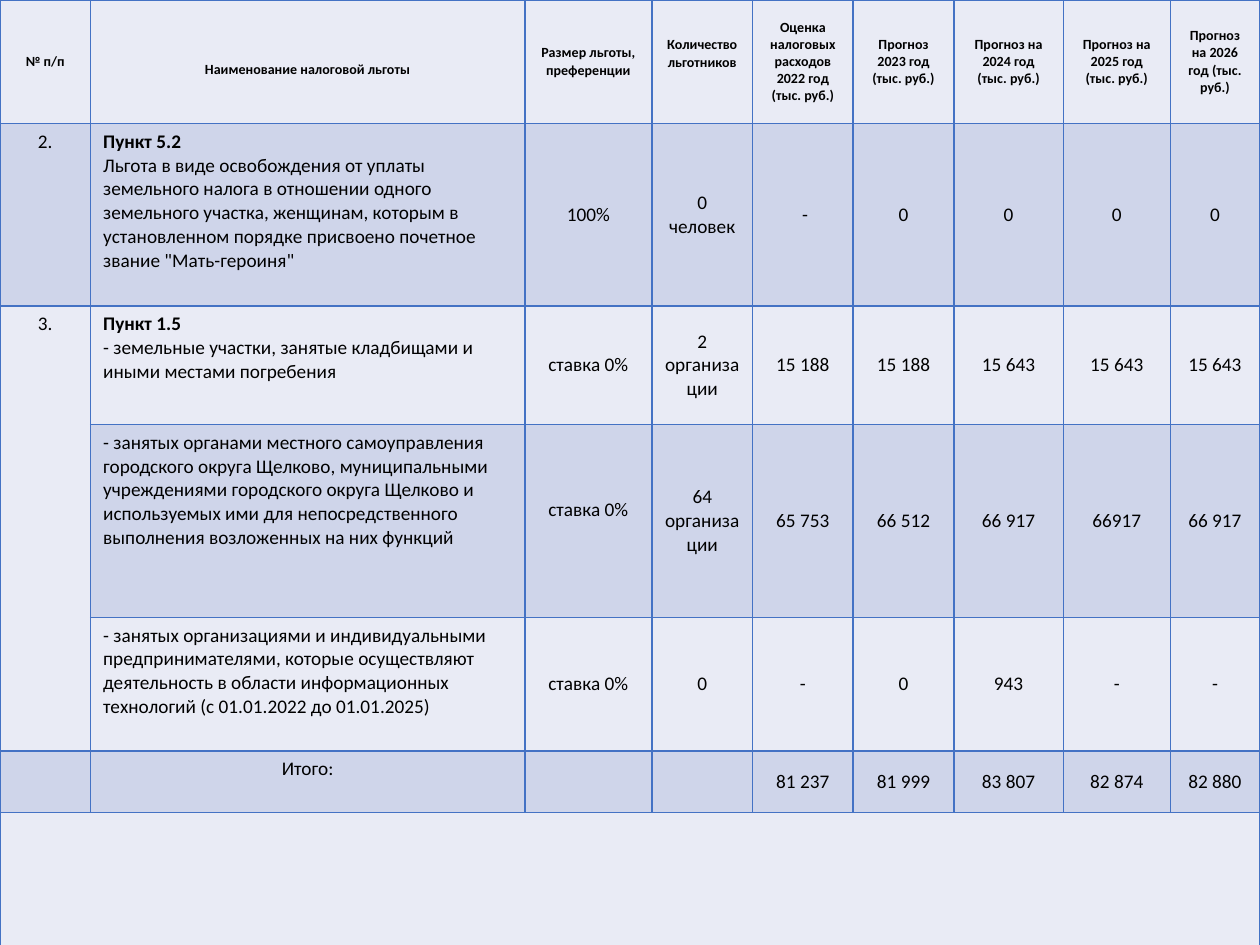
import lxml.etree
import pptx
import pptx.dml.color
import pptx.enum.text
import pptx.oxml.ns
import pptx.util

RGBColor = pptx.dml.color.RGBColor
PALE = RGBColor(0xE9, 0xEB, 0xF5)
TINTED = RGBColor(0xCF, 0xD5, 0xEA)
BORDER = RGBColor(0x44, 0x72, 0xC4)
BLACK = RGBColor(0, 0, 0)

ALIGN = pptx.enum.text.PP_ALIGN
ANCHOR = pptx.enum.text.MSO_ANCHOR
HEADER_FONT = {"name": "Calibri", "size": pptx.util.Pt(8), "bold": True}
BODY_FONT = {"name": "Calibri", "size": pptx.util.Pt(11), "bold": False}

COLUMN_WEIGHTS = [0.72, 3.45, 1.01, 0.8, 0.8, 0.8, 0.87, 0.85, 0.71]
ROW_WEIGHTS = [0.98, 1.45, 0.94, 1.53, 1.06, 0.49, 1.14]
NAME_COLUMN = 1

BENEFITS = [
    ["№ п/п", "Наименование налоговой льготы", "Размер льготы, преференции",
     "Количество льготников", "Оценка налоговых расходов 2022 год (тыс. руб.)",
     "Прогноз\n2023 год (тыс. руб.)", "Прогноз на 2024 год (тыс. руб.)",
     "Прогноз на 2025 год (тыс. руб.)", "Прогноз на 2026 год (тыс. руб.)"],
    ["2.", "Пункт 5.2\nЛьгота в виде освобождения от уплаты земельного налога в отношении "
     "одного земельного участка, женщинам, которым в установленном порядке присвоено "
     "почетное звание \"Мать-героиня\"",
     "100%", "0 человек", " -", "0", "0", "0", "0"],
    ["3.", "Пункт 1.5\n- земельные участки, занятые кладбищами и иными местами погребения",
     "ставка 0%", "2 организации", "15 188", "15 188", "15 643", "15 643", "15 643"],
    ["", "- занятых органами местного самоуправления городского округа Щелково, "
     "муниципальными учреждениями городского округа Щелково и используемых ими для "
     "непосредственного выполнения возложенных на них функций",
     "ставка 0%", "64 организации", "65 753", "66 512", "66 917", "66917", "66 917"],
    ["", "- занятых организациями и индивидуальными предпринимателями, которые осуществляют "
     "деятельность в области информационных технологий (с 01.01.2022 до 01.01.2025)",
     "ставка 0%", "0", "-", "0", "943", "-", "-"],
    ["", "Итого:", "", "", "81 237", "81 999", "83 807", "82 874", "82 880"],
    [""] * len(COLUMN_WEIGHTS),
]
TOTAL_ROW = 5
CELL_MARGINS = {
    (0, 1): {"margin_top": pptx.util.Inches(0.18)},
    (0, 3): {"margin_bottom": pptx.util.Inches(0.18)},
    (3, 2): {"margin_bottom": pptx.util.Inches(0.23)},
}


def set_attributes(target, values):
    for name, value in values.items():
        setattr(target, name, value)


def draw_borders(cell):
    properties = cell._tc.get_or_add_tcPr()
    qualified = pptx.oxml.ns.qn
    for position, side in enumerate(("lnL", "lnR", "lnT", "lnB")):
        line = lxml.etree.Element(qualified("a:" + side), w=str(pptx.util.Pt(1)))
        fill = lxml.etree.SubElement(line, qualified("a:solidFill"))
        lxml.etree.SubElement(fill, qualified("a:srgbClr"), val=str(BORDER))
        properties.insert(position, line)


def write_cell(cell, text, font, alignment):
    cell.text = text
    for para in cell.text_frame.paragraphs:
        para.alignment = alignment
        for span in para.runs:
            set_attributes(span.font, font)
            span.font.bold = font["bold"] or span.text.startswith("Пункт")
            span.font.color.rgb = BLACK


def add_benefits_table(page, left, top, width, height):
    frame = page.shapes.add_table(
        len(ROW_WEIGHTS), len(COLUMN_WEIGHTS), left, top, width, height)
    table = frame.table
    set_attributes(table, {"first_row": False, "horz_banding": False})
    for column, weight in zip(table.columns, COLUMN_WEIGHTS):
        column.width = int(width * weight / sum(COLUMN_WEIGHTS))
    for row, weight in zip(table.rows, ROW_WEIGHTS):
        row.height = int(height * weight / sum(ROW_WEIGHTS))

    for row, texts in enumerate(BENEFITS):
        for column, text in enumerate(texts):
            cell = table.cell(row, column)
            in_header = row == 0
            is_label = not in_header and column <= NAME_COLUMN
            is_description = is_label and column == NAME_COLUMN and row != TOTAL_ROW
            cell.fill.solid()
            cell.fill.fore_color.rgb = TINTED if row % 2 else PALE
            cell.vertical_anchor = ANCHOR.TOP if is_label else ANCHOR.MIDDLE
            set_attributes(cell, CELL_MARGINS.get((row, column), {}))
            draw_borders(cell)
            if text:
                write_cell(cell, text, HEADER_FONT if in_header else BODY_FONT,
                           ALIGN.LEFT if is_description else ALIGN.CENTER)

    table.cell(2, 0).merge(table.cell(4, 0))
    table.cell(6, 0).merge(table.cell(6, len(COLUMN_WEIGHTS) - 1))


def main():
    deck = pptx.Presentation()
    deck.slide_width = pptx.util.Inches(10)
    deck.slide_height = pptx.util.Inches(7.5)
    page = deck.slides.add_slide(deck.slide_layouts[6])
    add_benefits_table(page, 0, 0, deck.slide_width, pptx.util.Inches(sum(ROW_WEIGHTS)))
    deck.save("out.pptx")


if __name__ == "__main__":
    main()
